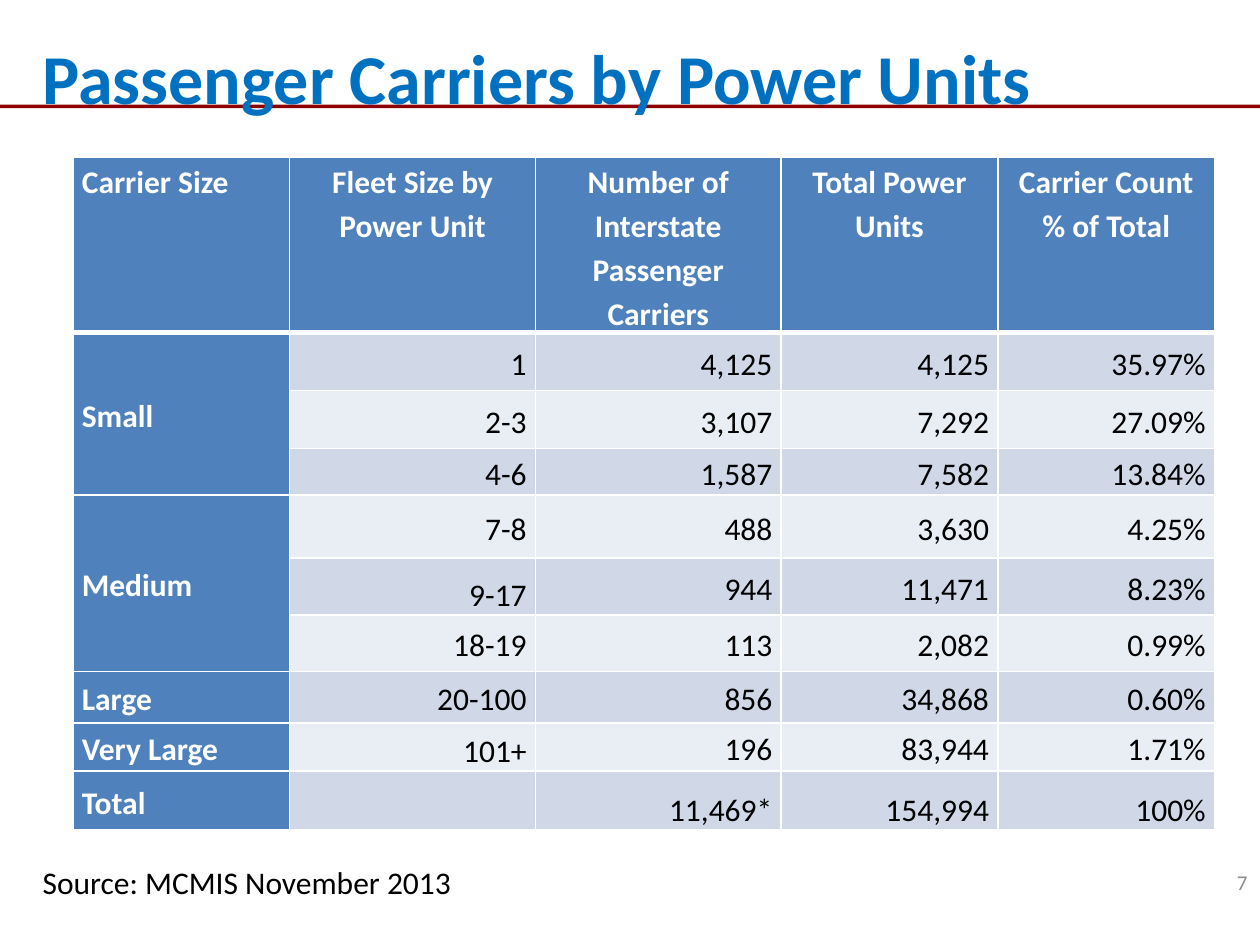
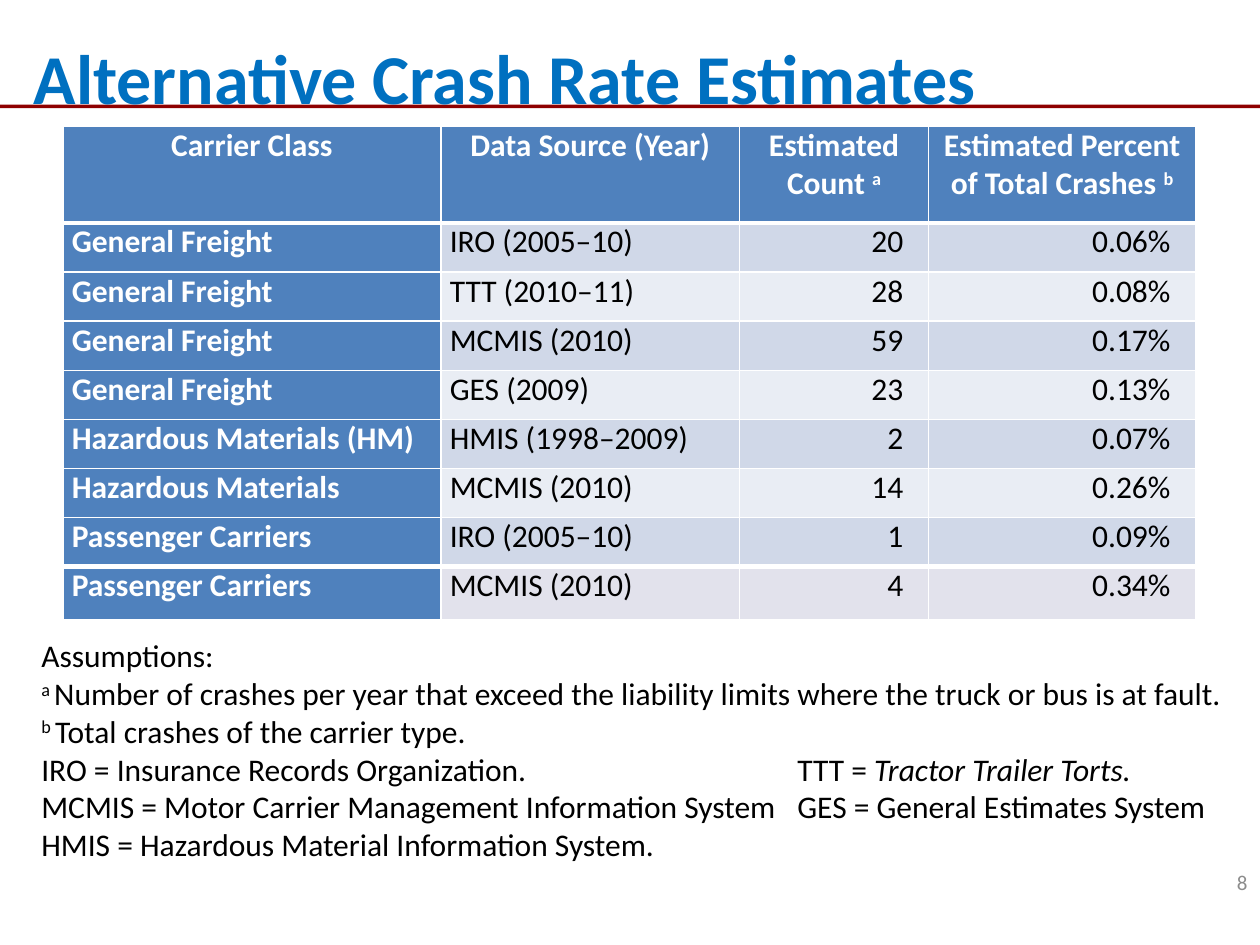
from dataclasses import dataclass

from lxml import etree
from pptx import Presentation
from pptx import util as u
from pptx.dml import color
from pptx.enum import shapes, text
from pptx.oxml import ns

EMU_PER_PX = 9144
LEFT, CENTER, RIGHT = text.PP_ALIGN.LEFT, text.PP_ALIGN.CENTER, text.PP_ALIGN.RIGHT
TOP, MIDDLE, BOTTOM = text.MSO_ANCHOR.TOP, text.MSO_ANCHOR.MIDDLE, text.MSO_ANCHOR.BOTTOM


@dataclass(frozen=True)
class Theme:
    font: str = "Calibri"
    title: str = "0070C0"
    rule: str = "8E0000"
    header: str = "4F81BD"
    bands: tuple = ("D0D8E8", "E9EDF4")
    last_row: str = "E2E2EC"
    ink: str = "000000"
    white: str = "FFFFFF"
    muted: str = "8C8C8C"
    title_size: int = 40
    body_size: int = 18
    number_size: int = 12
    thin: int = 1
    thick: int = 3


THEME = Theme()

FLEET_COLUMNS = (172, 195, 195, 172, 172)
FLEET_ROW_HEIGHTS = (139, 46, 46, 37, 50, 45, 45, 41, 38, 47)
FLEET_ROWS = (
    ("Carrier Size", "Fleet Size by Power Unit", "Number of Interstate Passenger Carriers",
     "Total Power Units", "Carrier Count % of Total"),
    ("Small", "1", "4,125", "4,125", "35.97%"),
    ("", "2-3", "3,107", "7,292", "27.09%"),
    ("", "4-6", "1,587", "7,582", "13.84%"),
    ("Medium", "7-8", "488", "3,630", "4.25%"),
    ("", "9-17", "944", "11,471", "8.23%"),
    ("", "18-19", "113", "2,082", "0.99%"),
    ("Large", "20-100", "856", "34,868", "0.60%"),
    ("Very Large", "101+", "196", "83,944", "1.71%"),
    ("Total", "", "11,469*", "154,994", "100%"),
)
FLEET_BOTTOM_CELLS = {(5, 1), (8, 1), (9, 2), (9, 3), (9, 4)}

CRASH_COLUMNS = (300, 237, 150, 212)
CRASH_ROW_HEIGHTS = (77,) + (39,) * 7 + (42,)
CRASH_ROWS = (
    ("Carrier Class", "Data Source (Year)",
     (("Estimated Count ", ""), ("a", "super")),
     (("Estimated Percent of Total Crashes ", ""), ("b", "super"))),
    ("General Freight", "IRO (2005–10)", "20", "0.06%"),
    ("General Freight", "TTT (2010–11)", "28", "0.08%"),
    ("General Freight", "MCMIS (2010)", "59", "0.17%"),
    ("General Freight", "GES (2009)", "23", "0.13%"),
    ("Hazardous Materials (HM)", "HMIS (1998–2009)", "2", "0.07%"),
    ("Hazardous Materials", "MCMIS (2010)", "14", "0.26%"),
    ("Passenger Carriers", "IRO (2005–10)", "1", "0.09%"),
    ("Passenger Carriers", "MCMIS (2010)", "4", "0.34%"),
)
ASSUMPTIONS = (
    "Assumptions:",
    (("a ", "super"), ("Number of crashes per year that exceed the liability limits "
                       "where the truck or bus is at fault.", "")),
    (("b ", "super"), ("Total crashes of the carrier type.", "")),
    (("IRO = Insurance Records Organization.\tTTT = ", ""), ("Tractor Trailer Torts.", "italic")),
    "MCMIS = Motor Carrier Management Information System\tGES = General Estimates System",
    "HMIS = Hazardous Material Information System.",
)


def px(length):
    return u.Emu(length * EMU_PER_PX)


def rgb(value):
    return color.RGBColor.from_string(value)


def write_text(frame, paragraphs, *, size=THEME.body_size, ink=THEME.ink, bold=False,
               align=LEFT, spacing=None, tab=None):
    frame.word_wrap = True
    for index, runs in enumerate(paragraphs):
        paragraph = frame.add_paragraph() if index else frame.paragraphs[0]
        if tab:
            stops = etree.SubElement(paragraph._p.get_or_add_pPr(), ns.qn("a:tabLst"))
            etree.SubElement(stops, ns.qn("a:tab"), pos=str(px(tab)), algn="l")
        paragraph.alignment = align
        paragraph.line_spacing = spacing
        for words, style in ((runs, ""),) if isinstance(runs, str) else runs:
            run = paragraph.add_run()
            run.text = words
            font = run.font
            font.name, font.size, font.bold = THEME.font, u.Pt(size), bold
            font.italic = style == "italic"
            font.color.rgb = rgb(ink)
            if style == "super":
                run._r.get_or_add_rPr().set("baseline", "30000")


def add_text(slide, box, paragraphs, *, anchor=TOP, **text_format):
    frame = slide.shapes.add_textbox(*map(px, box)).text_frame
    frame.vertical_anchor = anchor
    write_text(frame, paragraphs, **text_format)


def add_frame(slide, title, title_left, number):
    rule = slide.shapes.add_shape(shapes.MSO_SHAPE.RECTANGLE, *map(px, (0, 83, 1000, 3)))
    rule.shadow.inherit = False
    rule.fill.solid()
    rule.fill.fore_color.rgb = rgb(THEME.rule)
    rule.line.fill.background()
    add_text(slide, (title_left, 17, 1000 - title_left, 87), [title], anchor=MIDDLE,
             size=THEME.title_size, ink=THEME.title, bold=True)
    add_text(slide, (767, 680, 233, 40), [str(number)], anchor=MIDDLE,
             size=THEME.number_size, ink=THEME.muted, align=RIGHT)


def set_borders(cell, top, bottom):
    properties = cell._tc.get_or_add_tcPr()
    widths = {"lnL": THEME.thin, "lnR": THEME.thin, "lnT": top, "lnB": bottom}
    for index, (side, width) in enumerate(widths.items()):
        line = etree.Element(ns.qn(f"a:{side}"), w=str(u.Pt(width)))
        fill = etree.SubElement(line, ns.qn("a:solidFill"))
        etree.SubElement(fill, ns.qn("a:srgbClr"), val=THEME.white)
        properties.insert(index, line)


def add_grid(slide, box, columns, heights, rows, *, thick_after, fill_for, format_for):
    left, top = box
    table = slide.shapes.add_table(len(rows), len(columns), px(left), px(top),
                                   px(sum(columns)), px(sum(heights))).table
    for column, width in zip(table.columns, columns):
        column.width = px(width)
    for row, height in zip(table.rows, heights):
        row.height = px(height)
    for r, values in enumerate(rows):
        for c, value in enumerate(values):
            cell = table.cell(r, c)
            heading = r == 0 or c == 0
            cell_format = format_for(r, c)
            margins = cell_format.pop("margins", (7, 7))
            cell.margin_left, cell.margin_right = map(px, margins)
            cell.margin_top = cell.margin_bottom = 0
            cell.vertical_anchor = cell_format.pop("anchor", TOP)
            cell.fill.solid()
            cell.fill.fore_color.rgb = rgb(THEME.header if heading else fill_for(r))
            set_borders(cell, THEME.thick if r - 1 in thick_after else THEME.thin,
                        THEME.thick if r in thick_after else THEME.thin)
            if value:
                write_text(cell.text_frame, [value], bold=heading,
                           ink=THEME.white if heading else THEME.ink, **cell_format)
    return table


def band_fill(row):
    return THEME.bands[(row - 1) % 2]


def crash_fill(row):
    return THEME.last_row if row == len(CRASH_ROWS) - 1 else band_fill(row)


def fleet_format(row, column):
    if row == 0:
        return {"spacing": 1.15, "align": CENTER if column else LEFT}
    anchor = BOTTOM if (row, column) in FLEET_BOTTOM_CELLS else MIDDLE
    return {"spacing": 1.15, "anchor": anchor, "align": RIGHT if column else LEFT}


def crash_format(row, column):
    if row == 0:
        return {"align": CENTER}
    return {"align": RIGHT, "margins": (8, 20)} if column > 1 else {"align": LEFT}


def build_fleet_slide(slide):
    add_frame(slide, "Passenger Carriers by Power Units", 24, 7)
    add_text(slide, (24, 680, 400, 40), ["Source: MCMIS November 2013"])
    table = add_grid(slide, (58, 125), FLEET_COLUMNS, FLEET_ROW_HEIGHTS, FLEET_ROWS,
                     thick_after={0}, fill_for=band_fill, format_for=fleet_format)
    for first in (1, 4):
        table.cell(first, 0).merge(table.cell(first + 2, 0))


def build_crash_slide(slide):
    add_frame(slide, "Alternative Crash Rate Estimates", 17, 8)
    add_grid(slide, (50, 100), CRASH_COLUMNS, CRASH_ROW_HEIGHTS, CRASH_ROWS,
             thick_after={0, 7}, fill_for=crash_fill, format_for=crash_format)
    add_text(slide, (23, 500, 976, 222), ASSUMPTIONS, tab=600)


def main():
    presentation = Presentation()
    presentation.slide_width, presentation.slide_height = px(1000), px(750)
    for build in (build_fleet_slide, build_crash_slide):
        build(presentation.slides.add_slide(presentation.slide_layouts[6]))
    presentation.save("out.pptx")


if __name__ == "__main__":
    main()
